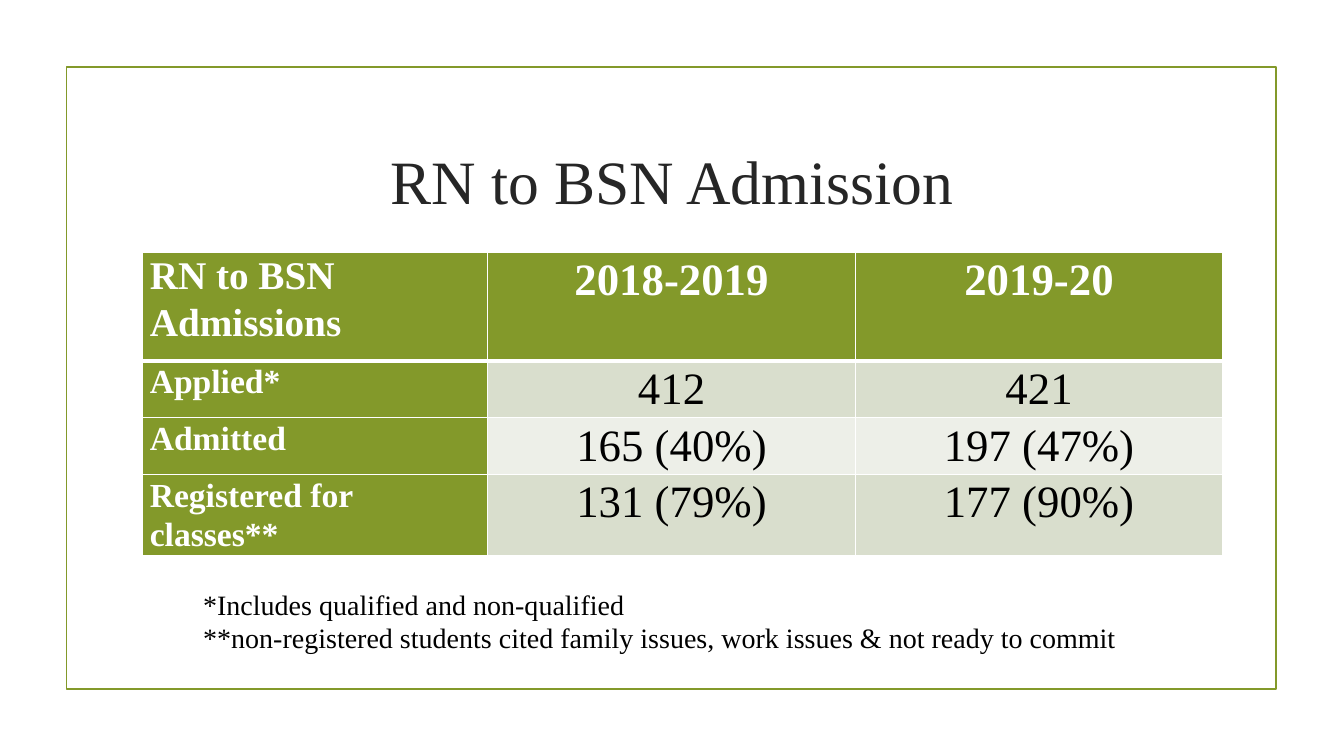
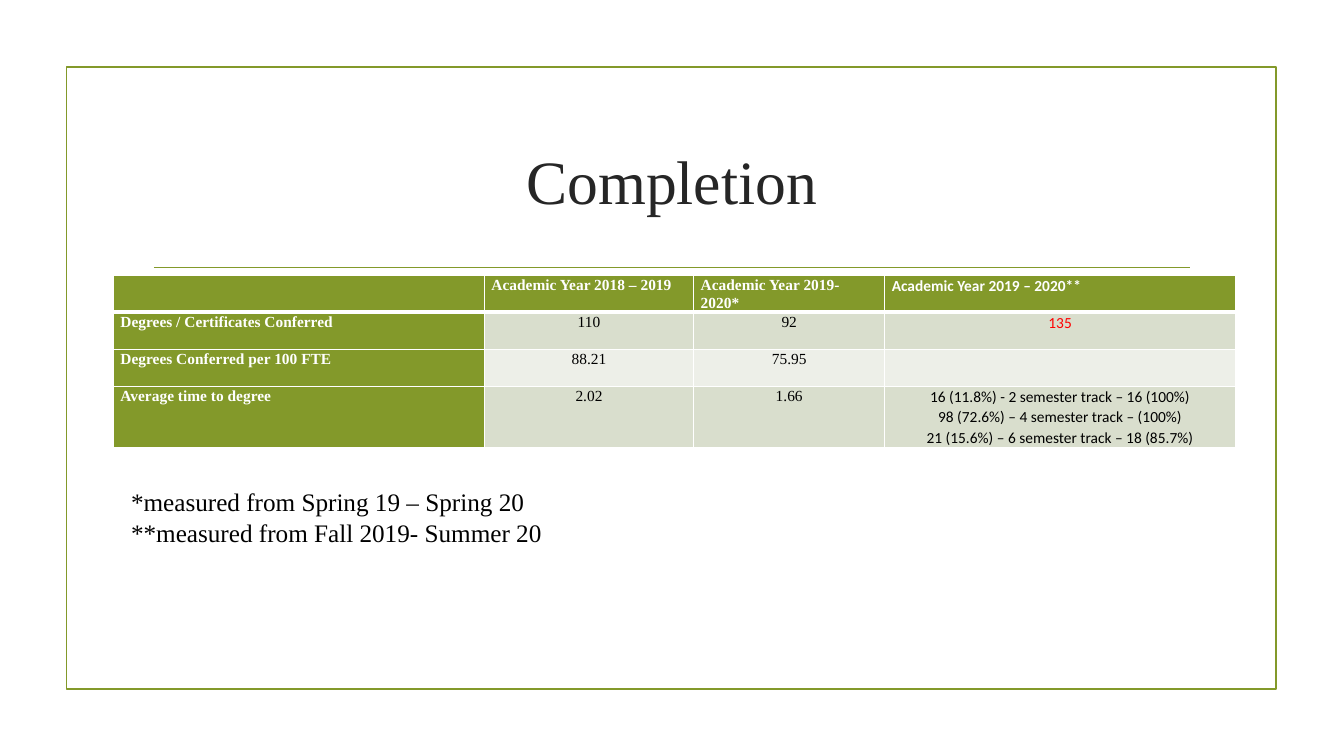
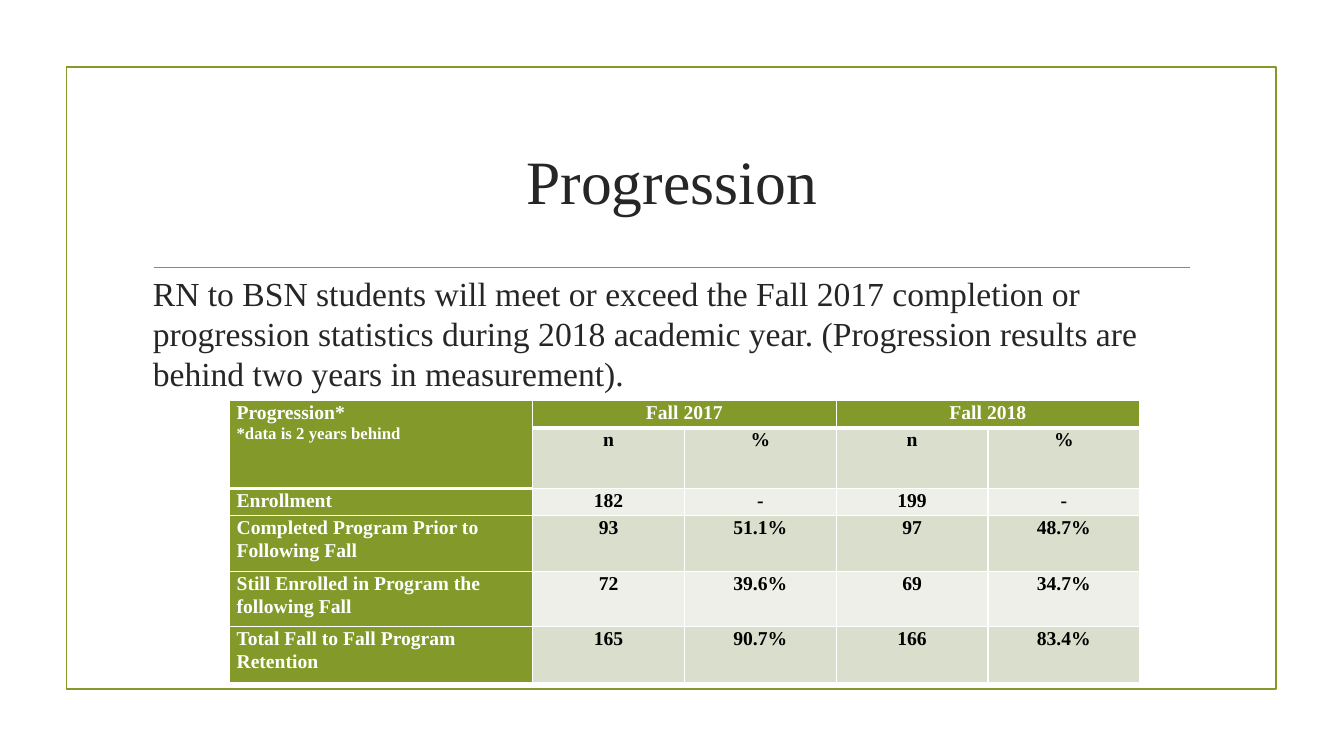
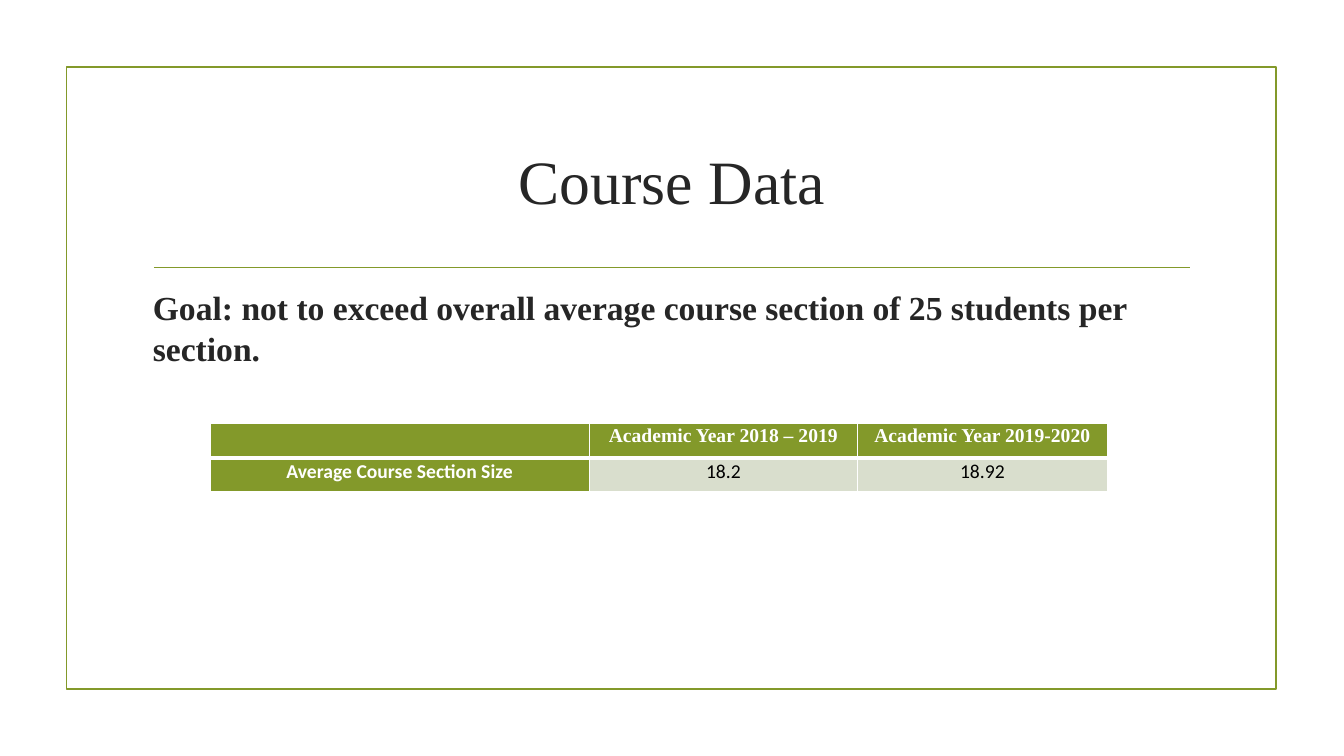
import copy

import pptx
import pptx.dml.color
import pptx.enum.shapes
import pptx.enum.text
import pptx.oxml
import pptx.oxml.ns
import pptx.oxml.xmlchemy
import pptx.util

Pt = pptx.util.Pt
ALIGN = pptx.enum.text.PP_ALIGN
ANCHOR = pptx.enum.text.MSO_ANCHOR

COLORS = {
    "green": "83992A",
    "band_dark": "D9DECD",
    "band_light": "EDEFE8",
    "ink": "262626",
    "black": "000000",
    "white": "FFFFFF",
    "red": "FF0000",
}
SERIF = "Times New Roman"
SANS = "Calibri"
TABLE_SPACING = 1.07
TITLE_BOX = (102, 77, 756, 103)


def rgb(name):
    return pptx.dml.color.RGBColor.from_string(COLORS[name])


def place(sp, box):
    sp.left, sp.top, sp.width, sp.height = map(Pt, box)


def add_run(p, text, size, color, font=SERIF, bold=False):
    r = p.add_run()
    r.text = text
    r.font.size = Pt(size)
    r.font.name = font
    r.font.bold = bold
    r.font.color.rgb = rgb(color)


def next_paragraph(tf, index):
    return tf.paragraphs[0] if index == 0 else tf.add_paragraph()


# Shared frame, rule and title position
def set_up_layouts(prs, layouts):
    slide = prs.slides[0]
    frame = slide.shapes.add_shape(
        pptx.enum.shapes.MSO_SHAPE.RECTANGLE, Pt(47.5), Pt(48), Pt(864), Pt(444))
    frame.shadow.inherit = False
    frame.fill.background()
    rule = slide.shapes.add_connector(
        pptx.enum.shapes.MSO_CONNECTOR.STRAIGHT, Pt(110), Pt(191), Pt(850), Pt(191))
    rule.element.spPr.append(pptx.oxml.xmlchemy.OxmlElement("a:effectLst"))
    decor = [frame, rule]
    for shape_id, sp in enumerate(decor, start=20):
        sp.line.color.rgb = rgb("green")
        sp.line.width = Pt(1.25)
        sp.element.xpath(".//p:cNvPr")[0].set("id", str(shape_id))
    for layout in layouts:
        title = layout.placeholders[0]
        place(title, TITLE_BOX)
        for sp in decor:
            title.element.addprevious(copy.deepcopy(sp.element))
    for sp in decor:
        sp.element.getparent().remove(sp.element)


def set_title(slide, text):
    tf = slide.shapes.title.text_frame
    tf.vertical_anchor = ANCHOR.MIDDLE
    p = tf.paragraphs[0]
    p.alignment = ALIGN.CENTER
    add_run(p, text, 44, "ink")


def set_body(slide, text, top, height, bold=False):
    body = slide.placeholders[1]
    place(body, (102, top, 756, height))
    tf = body.text_frame
    tf.auto_size = pptx.enum.text.MSO_AUTO_SIZE.NONE
    p = tf.paragraphs[0]
    pPr = p._p.get_or_add_pPr()
    pPr.set("marL", "0")
    pPr.set("indent", "0")
    pPr.append(pptx.oxml.xmlchemy.OxmlElement("a:buNone"))
    p.space_before = Pt(0)
    p.space_after = Pt(6)
    add_run(p, text, 24, "ink", bold=bold)


def add_notes(slide, box, lines, size, indent=0):
    sp = slide.shapes.add_textbox(*map(Pt, box))
    tf = sp.text_frame
    tf.word_wrap = True
    for i, line in enumerate(lines):
        p = next_paragraph(tf, i)
        p._p.get_or_add_pPr().set("indent", str(Pt(indent)))
        add_run(p, line, size, "black")


# Tables
def set_borders(cell, top, bottom):
    tcPr = cell._tc.get_or_add_tcPr()
    for side, width in (("L", 1), ("R", 1), ("T", top), ("B", bottom)):
        ln = pptx.oxml.parse_xml(
            f'<a:ln{side} {pptx.oxml.ns.nsdecls("a")} w="{Pt(width)}"><a:solidFill>'
            f'<a:srgbClr val="{COLORS["white"]}"/></a:solidFill></a:ln{side}>')
        tcPr.append(ln)


def fill_cell(cell, lines, align, style):
    cell.margin_left = cell.margin_right = Pt(5)
    cell.margin_top = cell.margin_bottom = 0
    for i, line in enumerate(lines):
        p = next_paragraph(cell.text_frame, i)
        p.alignment = align
        p.line_spacing = TABLE_SPACING
        sizes = style["size"]
        size = sizes[i] if isinstance(sizes, tuple) else sizes
        add_run(p, line, **{**style, "size": size})


def add_table(slide, left, top, widths, heights, rows, size, *, label_size=None,
              head_align=ALIGN.CENTER, label_align=ALIGN.LEFT, bold_values=False,
              merges=(), corner_rows=1, special=None):
    """Green header row and label column; special maps (row, column) to run styles."""
    sp = slide.shapes.add_table(len(rows), len(widths), Pt(left), Pt(top),
                                Pt(sum(widths)), Pt(sum(heights)))
    table = sp.table
    for column, width in zip(table.columns, widths):
        column.width = Pt(width)
    for row, height in zip(table.rows, heights):
        row.height = Pt(height)
    for r, row in enumerate(rows):
        for c, text in enumerate(row):
            cell = table.cell(r, c)
            is_header = r == 0 or c == 0
            style = {"size": size, "bold": is_header or bold_values,
                     "color": "white" if is_header else "black"}
            if c == 0 and label_size:
                style["size"] = label_size
            style.update((special or {}).get((r, c), {}))
            align = label_align if c == 0 else head_align if r == 0 else ALIGN.CENTER
            fill_cell(cell, text.split("\n") if text else [], align, style)
            # Thick line below the header
            head_end = corner_rows if c == 0 else 1
            set_borders(cell, top=3 if r == head_end else 1,
                        bottom=3 if r == head_end - 1 else 1)
            band = "band_dark" if r % 2 else "band_light"
            cell.fill.solid()
            cell.fill.fore_color.rgb = rgb("green" if is_header else band)
    for first, last in merges:
        table.cell(*first).merge(table.cell(*last))


# Slides
def fill_admission(slide):
    set_title(slide, "RN to BSN Admission")
    add_table(slide, 102, 180, [246.5, 262.5, 262.5], [78, 40.5, 40.5, 58], [
        ["RN to BSN Admissions", "2018-2019", "2019-20"],
        ["Applied*", "412", "421"],
        ["Admitted", "165 (40%)", "197 (47%)"],
        ["Registered for classes**", "131 (79%)", "177 (90%)"],
    ], 32, label_size=24, special={(0, 0): {"size": 28}})
    add_notes(slide, (102, 416, 724, 56), [
        "*Includes qualified and non-qualified",
        "**non-registered students cited family issues, work issues & not ready to commit",
    ], 20, indent=36)


def fill_completion(slide):
    set_title(slide, "Completion")
    tracks = "\n".join([
        "16 (11.8%) - 2 semester track – 16 (100%)",
        "98 (72.6%) – 4 semester track – (100%)",
        "21 (15.6%) – 6 semester track – 18 (85.7%)",
    ])
    add_table(slide, 81, 196.5, [265, 149.5, 136.5, 250.5], [26.5, 26.5, 26.5, 43], [
        ["", "Academic Year 2018 – 2019", "Academic Year 2019-2020*",
         "Academic Year 2019 – 2020**"],
        ["Degrees / Certificates Conferred", "110", "92", "135"],
        ["Degrees Conferred per 100 FTE", "88.21", "75.95", ""],
        ["Average time to degree", "2.02", "1.66", tracks],
    ], 11, head_align=ALIGN.LEFT, special={
        (0, 3): {"font": SANS},
        (1, 3): {"font": SANS, "color": "red"},
        (3, 3): {"font": SANS},
    })
    add_notes(slide, (86.5, 344, 796, 51), [
        "*measured from Spring 19 – Spring 20",
        "**measured from Fall 2019- Summer 20",
    ], 18)


def fill_progression(slide):
    set_title(slide, "Progression")
    set_body(slide, "RN to BSN students will meet or exceed the Fall 2017 completion or "
             "progression statistics during 2018 academic year. (Progression results "
             "are behind two years in measurement).", 191, 271)
    add_table(slide, 164, 286, [216.5] + [108.4] * 4, [19.5, 43.5, 19.5] + [39.6] * 3, [
        ["Progression*\n*data is 2 years behind", "Fall 2017", "", "Fall 2018", ""],
        ["", "n", "%", "n", "%"],
        ["Enrollment", "182", "-", "199", "-"],
        ["Completed Program Prior to Following Fall", "93", "51.1%", "97", "48.7%"],
        ["Still Enrolled in Program the following Fall", "72", "39.6%", "69", "34.7%"],
        ["Total Fall to Fall Program Retention", "165", "90.7%", "166", "83.4%"],
    ], 14, bold_values=True, corner_rows=2, special={(0, 0): {"size": (14, 12)}},
        merges=[((0, 0), (1, 0)), ((0, 1), (0, 2)), ((0, 3), (0, 4))])


def fill_course_data(slide):
    set_title(slide, "Course Data")
    set_body(slide, "Goal: not to exceed overall average course section of 25 students "
             "per section.", 201.5, 261, bold=True)
    sans = {"font": SANS}
    add_table(slide, 150, 302.5, [271, 191.5, 178.5], [24.5, 24.5], [
        ["", "Academic Year 2018 – 2019", "Academic Year 2019-2020"],
        ["Average Course Section Size", "18.2", "18.92"],
    ], 14, label_align=ALIGN.CENTER, special={(1, c): sans for c in range(3)})


def main():
    prs = pptx.Presentation()
    prs.slide_width, prs.slide_height = Pt(960), Pt(540)
    with_body, title_only = prs.slide_layouts[1], prs.slide_layouts[5]
    plan = [
        (title_only, fill_admission),
        (title_only, fill_completion),
        (with_body, fill_progression),
        (with_body, fill_course_data),
    ]
    slides = [prs.slides.add_slide(layout) for layout, _ in plan]
    set_up_layouts(prs, [with_body, title_only])
    for slide, (_, fill) in zip(slides, plan):
        fill(slide)
    prs.save("out.pptx")


if __name__ == "__main__":
    main()
